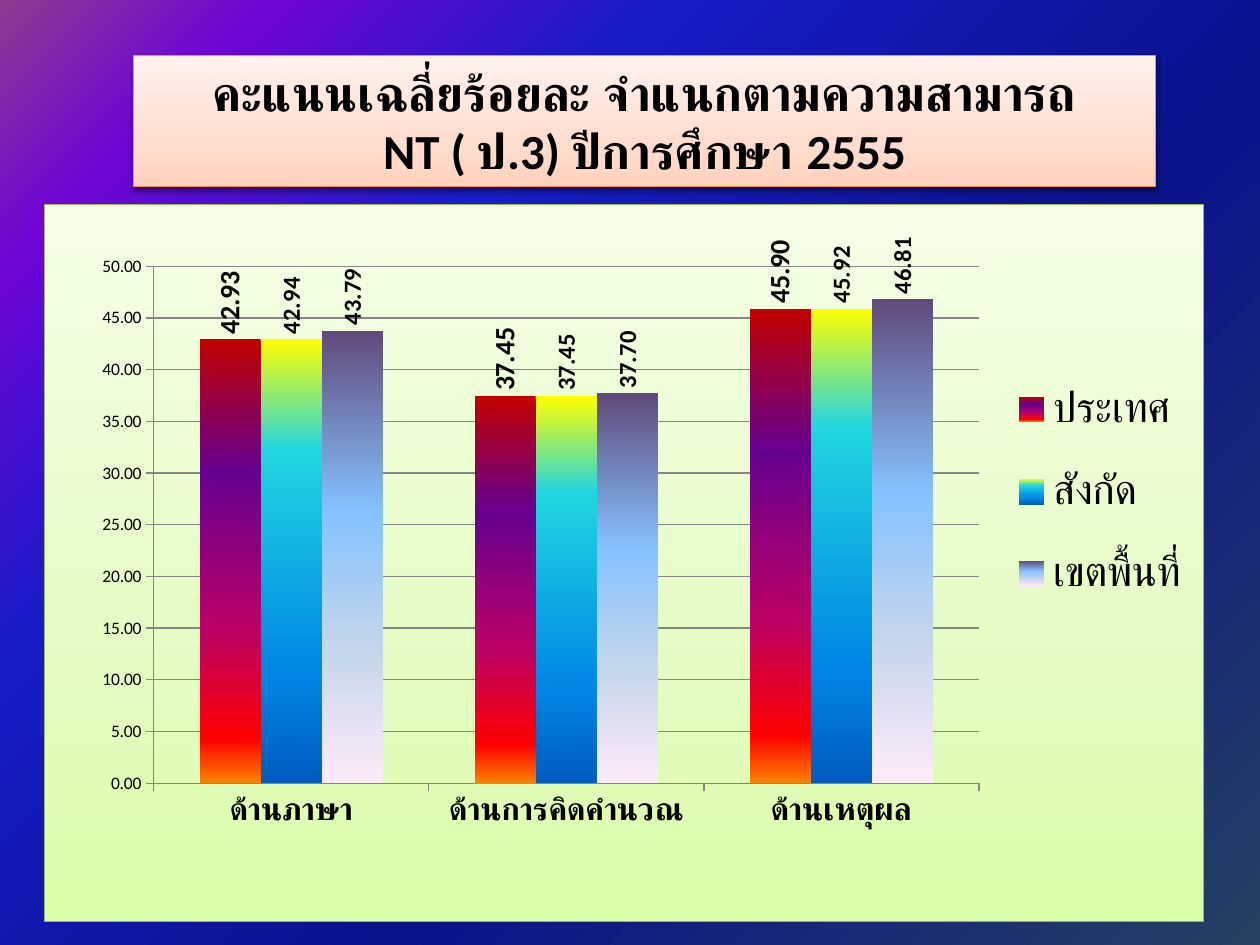
import pptx
import pptx.chart.data
import pptx.dml.color
import pptx.enum.chart
import pptx.enum.shapes
import pptx.enum.text
import pptx.oxml
import pptx.oxml.ns
import pptx.util

Inches = pptx.util.Inches
Pt = pptx.util.Pt

TITLE = ["คะแนนเฉลี่ยร้อยละ จำแนกตามความสามารถ", "NT ( ป.3) ปีการศึกษา 2555"]
CATEGORIES = ["ด้านภาษา", "ด้านการคิดคำนวณ", "ด้านเหตุผล"]
SERIES = [
    {
        "name": "ประเทศ",
        "values": [42.93, 37.45, 45.90],
        "stops": [(0, "C00000"), (30, "66008F"), (65, "BA0066"), (90, "FF0000"), (100, "FF8200")],
        "label_size": 16,
    },
    {
        "name": "สังกัด",
        "values": [42.94, 37.45, 45.92],
        "stops": [(0, "FFFF00"), (25, "21D6E0"), (75, "0087E6"), (100, "005CBF")],
        "label_size": 14,
    },
    {
        "name": "เขตพื้นที่",
        "values": [43.79, 37.70, 46.81],
        "stops": [(0, "604A7B"), (40, "85C2FF"), (70, "C4D6EB"), (100, "FFEBFA")],
        "label_size": 14,
    },
]
THEME = {
    "font": "Calibri",
    "text": "000000",
    "axis": "868686",
    "title_line": "F69240",
    "chart_line": "98B955",
    "background": [(0, "254061"), (40, "0A128C"), (70, "181CC7"), (88, "7005D4"), (100, "8C3D91")],
    "title_fill": [(0, "FFD2BD"), (35, "FFDED0"), (100, "FFF2ED")],
    "chart_fill": [(0, "DAFDA7"), (35, "E4FCC2"), (100, "F5FFE7")],
    "title_size": 28,
    "legend_size": 24,
    "category_size": 18,
    "base_size": 10,
    "line_width": 0.75,
}
TITLE_BOX = [Inches(value) for value in (1.06, 0.44, 8.11, 1.04)]
CHART_BOX = [Inches(value) for value in (0.35, 1.62, 9.21, 5.7)]
PLOT_AREA = {"x": 0.094, "y": 0.086, "w": 0.712, "h": 0.721}
LEGEND_AREA = {"x": 0.83, "y": 0.2, "w": 0.16, "h": 0.4}


def color(value):
    return pptx.dml.color.RGBColor.from_string(value)


def xml(tag, content):
    namespaces = pptx.oxml.ns.nsdecls("a", "c")
    return pptx.oxml.parse_xml(f"<{tag} {namespaces}>{content}</{tag}>")


def gradient_xml(stops, angle):
    items = "".join(
        f'<a:gs pos="{position * 1000}"><a:srgbClr val="{value}"/></a:gs>' for position, value in stops
    )
    return f'<a:gradFill><a:gsLst>{items}</a:gsLst><a:lin ang="{angle * 60000}" scaled="0"/></a:gradFill>'


def fill_gradient(fill, properties, stops, angle):
    fill.solid()
    solid = properties.find(pptx.oxml.ns.qn("a:solidFill"))
    gradient = xml("a:wrapper", gradient_xml(stops, angle))[0]
    properties.replace(solid, gradient)


def layout(area, inner=False):
    target = '<c:layoutTarget val="inner"/>' if inner else ""
    modes = "".join(f'<c:{key}Mode val="edge"/>' for key in "xy")
    sizes = "".join(f'<c:{key} val="{value}"/>' for key, value in area.items())
    return xml("c:layout", f"<c:manualLayout>{target}{modes}{sizes}</c:manualLayout>")


def format_font(font, size, bold=False):
    font.name = THEME["font"]
    font.size = Pt(size)
    font.bold = bold
    font.color.rgb = color(THEME["text"])


def add_text(paragraph, text, size, bold=False, alignment=pptx.enum.text.PP_ALIGN.CENTER):
    paragraph.alignment = alignment
    run = paragraph.add_run()
    run.text = text
    format_font(run.font, size, bold)


def add_title(slide):
    shape = slide.shapes.add_shape(pptx.enum.shapes.MSO_SHAPE.RECTANGLE, *TITLE_BOX)
    properties = shape.element.spPr
    fill_gradient(shape.fill, properties, THEME["title_fill"], 270)
    shape.line.color.rgb = color(THEME["title_line"])
    shape.line.width = Pt(THEME["line_width"])
    shape.shadow.inherit = False
    shadow = xml(
        "a:wrapper",
        f'<a:outerShdw blurRad="{Pt(3.1)}" dist="{Pt(1.6)}" dir="5400000" rotWithShape="0">'
        '<a:srgbClr val="000000"><a:alpha val="38000"/></a:srgbClr></a:outerShdw>',
    )[0]
    properties.find(pptx.oxml.ns.qn("a:effectLst")).append(shadow)
    frame = shape.text_frame
    frame.word_wrap = True
    frame.auto_size = pptx.enum.text.MSO_AUTO_SIZE.SHAPE_TO_FIT_TEXT
    for index, text in enumerate(TITLE):
        paragraph = frame.add_paragraph() if index else frame.paragraphs[0]
        add_text(paragraph, text, THEME["title_size"], bold=True)


def format_line(line):
    line.color.rgb = color(THEME["axis"])
    line.width = Pt(THEME["line_width"])


def format_axes(chart):
    for axis in (chart.category_axis, chart.value_axis):
        axis.major_tick_mark = pptx.enum.chart.XL_TICK_MARK.OUTSIDE
        axis.minor_tick_mark = pptx.enum.chart.XL_TICK_MARK.NONE
        format_line(axis.format.line)
    format_font(chart.category_axis.tick_labels.font, THEME["category_size"], bold=True)
    axis = chart.value_axis
    axis.minimum_scale, axis.maximum_scale, axis.major_unit = 0, 50, 5
    axis.has_major_gridlines = True
    format_line(axis.major_gridlines.format.line)
    axis.tick_labels.number_format = "0.00"
    axis.tick_labels.number_format_is_linked = False
    format_font(axis.tick_labels.font, THEME["base_size"])


def format_series(series, entry):
    series.smooth = False if hasattr(series, "smooth") else None
    series.invert_if_negative = False
    fill_gradient(series.format.fill, series.format.element.spPr if hasattr(series.format, "element")
                  else series._element.spPr, entry["stops"], 90)
    labels = series.data_labels
    labels.show_value = True
    labels.number_format = "0.00"
    labels.number_format_is_linked = False
    labels.position = pptx.enum.chart.XL_LABEL_POSITION.OUTSIDE_END
    format_font(labels.font, entry["label_size"], bold=True)
    body = series._element.xpath("c:dLbls/c:txPr/a:bodyPr")[0]
    body.set("rot", "-5400000")
    body.set("vert", "horz")


def add_chart(slide):
    data = pptx.chart.data.CategoryChartData(number_format="0.00")
    data.categories = CATEGORIES
    for entry in SERIES:
        data.add_series(entry["name"], entry["values"])
    chart_type = pptx.enum.chart.XL_CHART_TYPE.COLUMN_CLUSTERED
    chart = slide.shapes.add_chart(chart_type, *CHART_BOX, data).chart
    chart.has_title = False
    format_font(chart.font, THEME["base_size"])
    plot = chart.plots[0]
    plot.vary_by_categories = False
    plot.gap_width = 150
    plot.overlap = 0
    for series, entry in zip(plot.series, SERIES):
        format_series(series, entry)
    format_axes(chart)
    chart.has_legend = True
    chart.legend.position = pptx.enum.chart.XL_LEGEND_POSITION.RIGHT
    chart.legend.include_in_layout = False
    format_font(chart.legend.font, THEME["legend_size"])
    root = chart.element
    for old in root.xpath("c:chart/c:plotArea/c:layout | c:chart/c:legend/c:layout"):
        old.getparent().remove(old)
    root.xpath("c:chart/c:plotArea")[0].insert(0, layout(PLOT_AREA, inner=True))
    root.xpath("c:chart/c:legend/c:legendPos")[0].addnext(layout(LEGEND_AREA))
    border = (
        f'<a:ln w="{Pt(THEME["line_width"])}"><a:solidFill>'
        f'<a:srgbClr val="{THEME["chart_line"]}"/></a:solidFill></a:ln>'
    )
    area = xml("c:spPr", gradient_xml(THEME["chart_fill"], 270) + border)
    root.xpath("c:chart")[0].addnext(area)


def main():
    presentation = pptx.Presentation()
    presentation.slide_width = Inches(10)
    presentation.slide_height = Inches(7.5)
    slide = presentation.slides.add_slide(presentation.slide_layouts[6])
    fill = slide.background.fill
    fill.solid()
    properties = slide.element.xpath("p:cSld/p:bg/p:bgPr")[0]
    fill_gradient(fill, properties, THEME["background"], 225)
    add_chart(slide)
    add_title(slide)
    presentation.save("out.pptx")


if __name__ == "__main__":
    main()
